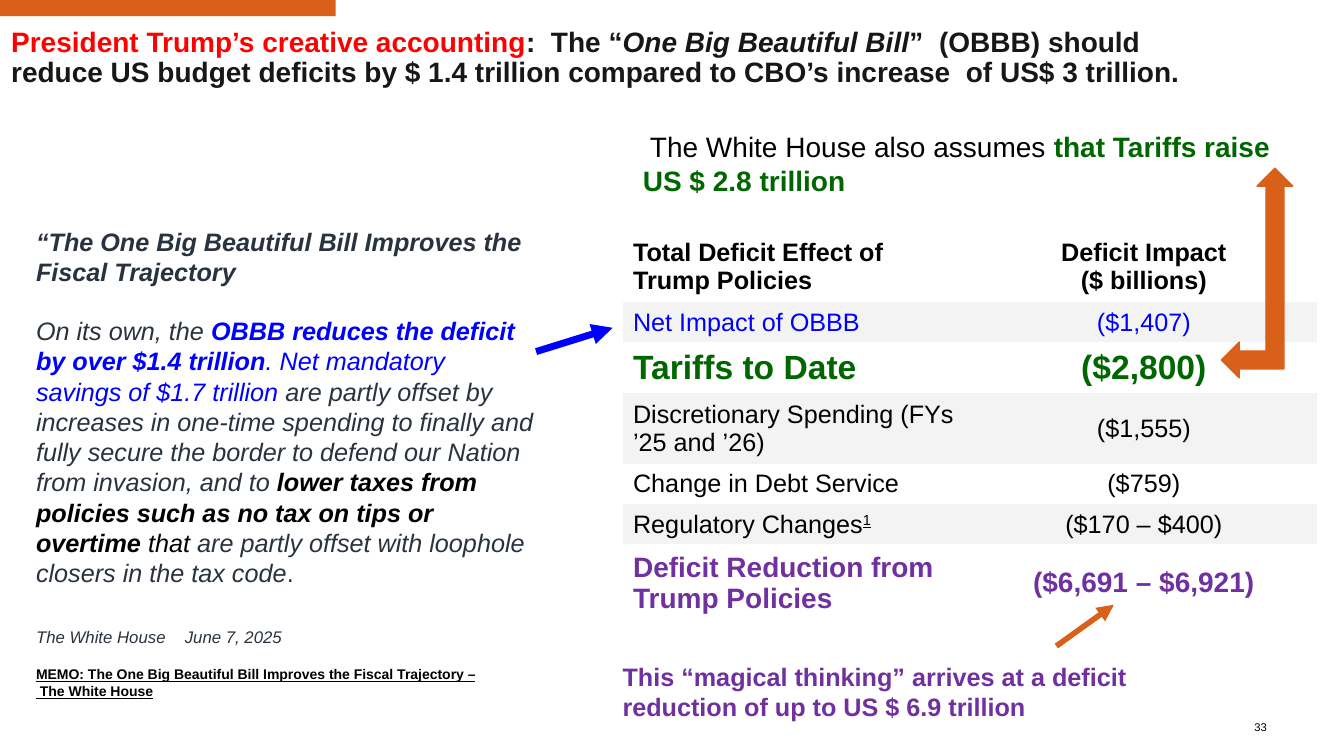
from dataclasses import dataclass

from lxml import etree
from pptx import Presentation
from pptx.dml.color import RGBColor
from pptx.enum.shapes import MSO_CONNECTOR, MSO_SHAPE
from pptx.enum.text import MSO_ANCHOR, MSO_AUTO_SIZE, PP_ALIGN
from pptx.oxml.ns import qn
from pptx.util import Cm, Pt

LEFT, CENTER, RIGHT = PP_ALIGN.LEFT, PP_ALIGN.CENTER, PP_ALIGN.RIGHT
TOP, MIDDLE = MSO_ANCHOR.TOP, MSO_ANCHOR.MIDDLE
NO_FIT = MSO_AUTO_SIZE.NONE
STRAIGHT = MSO_CONNECTOR.STRAIGHT
RECTANGLE, LEFT_UP_ARROW = MSO_SHAPE.RECTANGLE, MSO_SHAPE.LEFT_UP_ARROW
TITLE_ONLY = 5
PLAIN_TABLE = "{2D5ABB26-0587-4C30-8999-92F81FD0307C}"


@dataclass(frozen=True)
class Theme:
    font: str = "Arial"
    accent: str = "D86018"
    heading: str = "161818"
    alert: str = "FF0000"
    ink: str = "000000"
    slate: str = "293340"
    blue: str = "0000FF"
    green: str = "006600"
    purple: str = "7030A0"
    band: str = "F3F3F3"
    paper: str = "FFFFFF"
    tiny: int = 8
    link: int = 10
    source: int = 12
    body: int = 18
    lead: int = 20
    large: int = 24


def apply(target, values):
    for name, value in values.items():
        setattr(target, name, value)


def para(*spans, indent=0, tab=0, **values):
    return {"spans": spans, "indent": indent, "tab": tab, "values": values}


class SlideBuilder:
    def __init__(self, page, theme):
        self.page = page
        self.theme = theme

    def style(self, size, color, **values):
        return {"size": Pt(size), "color": color, "name": self.theme.font, **values}

    def fill_text(self, frame, paras):
        for index, content in enumerate(paras):
            target = frame.add_paragraph() if index else frame.paragraphs[0]
            props = target._p.get_or_add_pPr()
            if content["indent"]:
                props.set("indent", str(Cm(content["indent"])))
            if content["tab"]:
                tabs = etree.SubElement(props, qn("a:tabLst"))
                etree.SubElement(tabs, qn("a:tab"), pos=str(Cm(content["tab"])), algn="l")
            apply(target, content["values"])
            for text, style in content["spans"]:
                span = target.add_run()
                span.text = text
                values = dict(style)
                span.font.color.rgb = RGBColor.from_string(values.pop("color"))
                if "baseline" in values:
                    span._r.get_or_add_rPr().set("baseline", values.pop("baseline"))
                apply(span.font, values)

    def frame(self, box, paras, anchor=TOP, inset=None, wrap=True):
        frame = box.text_frame
        apply(frame, {"word_wrap": wrap, "auto_size": NO_FIT, "vertical_anchor": anchor})
        if inset is not None:
            sides = ("left", "top", "right", "bottom")
            apply(frame, {f"margin_{side}": Cm(inset) for side in sides})
        self.fill_text(frame, paras)

    def title(self, place, paras):
        box = self.page.shapes.title
        apply(box, dict(zip(("left", "top", "width", "height"), map(Cm, place))))
        self.frame(box, paras, inset=0)

    def text(self, place, paras, **values):
        self.frame(self.page.shapes.add_textbox(*map(Cm, place)), paras, **values)

    def shape(self, kind, place, color, outline=0):
        shape = self.page.shapes.add_shape(kind, *map(Cm, place))
        shape.shadow.inherit = False
        shape.fill.solid()
        shape.fill.fore_color.rgb = RGBColor.from_string(color)
        if outline:
            shape.line.color.rgb = RGBColor.from_string(color)
            shape.line.width = Pt(outline)
        else:
            shape.line.fill.background()

    def arrow(self, start, end, color, width):
        arrow = self.page.shapes.add_connector(STRAIGHT, *map(Cm, start + end))
        arrow.line.color.rgb = RGBColor.from_string(color)
        arrow.line.width = Pt(width)
        props = arrow._element.spPr
        etree.SubElement(props.find(qn("a:ln")), qn("a:tailEnd"), type="triangle")
        etree.SubElement(props, qn("a:effectLst"))

    def table(self, place, heights, rows):
        columns = len(rows[0])
        holder = self.page.shapes.add_table(len(rows), columns, *map(Cm, place))
        table = holder.table
        apply(table, {"first_row": False, "horz_banding": False})
        table._tbl.tblPr.find(qn("a:tableStyleId")).text = PLAIN_TABLE
        for column in table.columns:
            column.width = Cm(place[2] / columns)
        for row, (height, cells) in enumerate(zip(heights, rows)):
            table.rows[row].height = Cm(height)
            for column, paras in enumerate(cells):
                cell = table.cell(row, column)
                cell.vertical_anchor = MIDDLE
                cell.fill.solid()
                fill = self.theme.band if row % 2 else self.theme.paper
                cell.fill.fore_color.rgb = RGBColor.from_string(fill)
                self.fill_text(cell.text_frame, paras)


def main():
    deck = Presentation()
    apply(deck, {"slide_width": Cm(33.87), "slide_height": Cm(19.05)})
    theme = Theme()
    page = deck.slides.add_slide(deck.slide_layouts[TITLE_ONLY])
    slide = SlideBuilder(page, theme)
    style = slide.style

    slide.shape(RECTANGLE, (0, 0, 8.46, 0.41), theme.accent)
    slide.text((31.22, 18.06, 0.71, 0.53),
               [para(("33", style(theme.tiny, theme.ink)), alignment=RIGHT)],
               anchor=MIDDLE, inset=0, wrap=False)

    heading = style(theme.lead, theme.heading, bold=True, italic=False)
    slide.title((0.28, 0.71, 29.54, 1.45), [para(
        ("President Trump’s creative accounting", {**heading, "color": theme.alert}),
        (":  The “", heading),
        ("One Big Beautiful Bill", {**heading, "italic": True}),
        ("”  (OBBB) should reduce US budget deficits by $ 1.4 trillion compared to "
         "CBO’s increase  of US$ 3 trillion.", heading),
        alignment=LEFT, line_spacing=0.9)])

    quote = style(theme.body, theme.slate, italic=True)
    savings = {**quote, "color": theme.blue}
    taxes = {**quote, "color": theme.ink}
    link = style(theme.link, theme.ink, bold=True, underline=True)
    slide.text((0.66, 5.46, 13.08, 12.4), [
        para(("“The One Big Beautiful Bill Improves the Fiscal Trajectory",
              {**quote, "bold": True})),
        para(("On its own, the ", quote),
             ("OBBB reduces the deficit by over $1.4 trillion", {**savings, "bold": True}),
             (". Net mandatory savings of $1.7 trillion ", savings),
             ("are partly offset by increases in one-time spending to finally and fully "
              "secure the border to defend our Nation from invasion, and to ", quote),
             ("lower taxes from policies such as no tax on tips or overtime ",
              {**taxes, "bold": True}),
             ("that ", taxes),
             ("are partly offset with loophole closers in the tax code", quote),
             (".", {**quote, "italic": False}),
             space_before=Pt(20.7)),
        para(("The White House\tJune 7, 2025", style(theme.source, theme.slate, italic=True)),
             tab=3.75, space_before=Pt(27.6)),
        para(("MEMO: The One Big Beautiful Bill Improves the Fiscal Trajectory –", link),
             space_before=Pt(13.8)),
        para((" The White House", link)),
    ], anchor=MIDDLE)

    header = style(theme.body, theme.ink, bold=True)
    plain = style(theme.body, theme.ink)
    note = {**plain, "underline": True, "baseline": "30000"}
    net = style(theme.body, theme.blue)
    tariffs = style(theme.large, theme.green, bold=True)
    total = style(theme.lead, theme.purple, bold=True)
    effects = [
        ([("Total Deficit Effect of Trump Policies", header)],
         ["Deficit Impact", "($ billions)"]),
        ([("Net Impact of OBBB", net)], ["($1,407)"]),
        ([("Tariffs to Date", tariffs)], ["($2,800)"]),
        ([("Discretionary Spending (FYs ’25 and ’26)", plain)], ["($1,555)"]),
        ([("Change in Debt Service", plain)], ["($759)"]),
        ([("Regulatory Changes", plain), ("1", note)], ["($170 – $400)"]),
        ([("Deficit Reduction from Trump Policies", total)], ["($6,691 – $6,921)"]),
    ]
    rows = [([para(*label)],
             [para((line, label[0][1]), alignment=CENTER) for line in impact])
            for label, impact in effects]
    slide.table((15.7, 5.84, 17.5, 9.83),
                (1.77, 1.02, 1.28, 1.77, 1.02, 1.02, 1.95), rows)

    raised = style(theme.lead, theme.green, bold=True)
    slide.text((15.95, 3.15, 16.99, 1.96), [
        para(("The White House also assumes ", style(theme.lead, theme.ink)),
             ("that Tariffs raise", raised), indent=0.18),
        para(("US $ 2.8 trillion", raised))])
    slide.text((15.44, 16.54, 16.26, 1.8), [para(
        ("This “magical thinking” arrives at a deficit reduction of up to US $ 6.9 trillion",
         style(theme.body, theme.purple, bold=True)))])

    slide.arrow((13.51, 8.86), (15.44, 8.26), theme.blue, 5)
    slide.arrow((26.62, 16.28), (28.07, 15.24), theme.accent, 4)
    slide.shape(LEFT_UP_ARROW, (30.78, 4.24, 1.8, 5.28), theme.accent, outline=1)
    deck.save("out.pptx")


if __name__ == "__main__":
    main()
